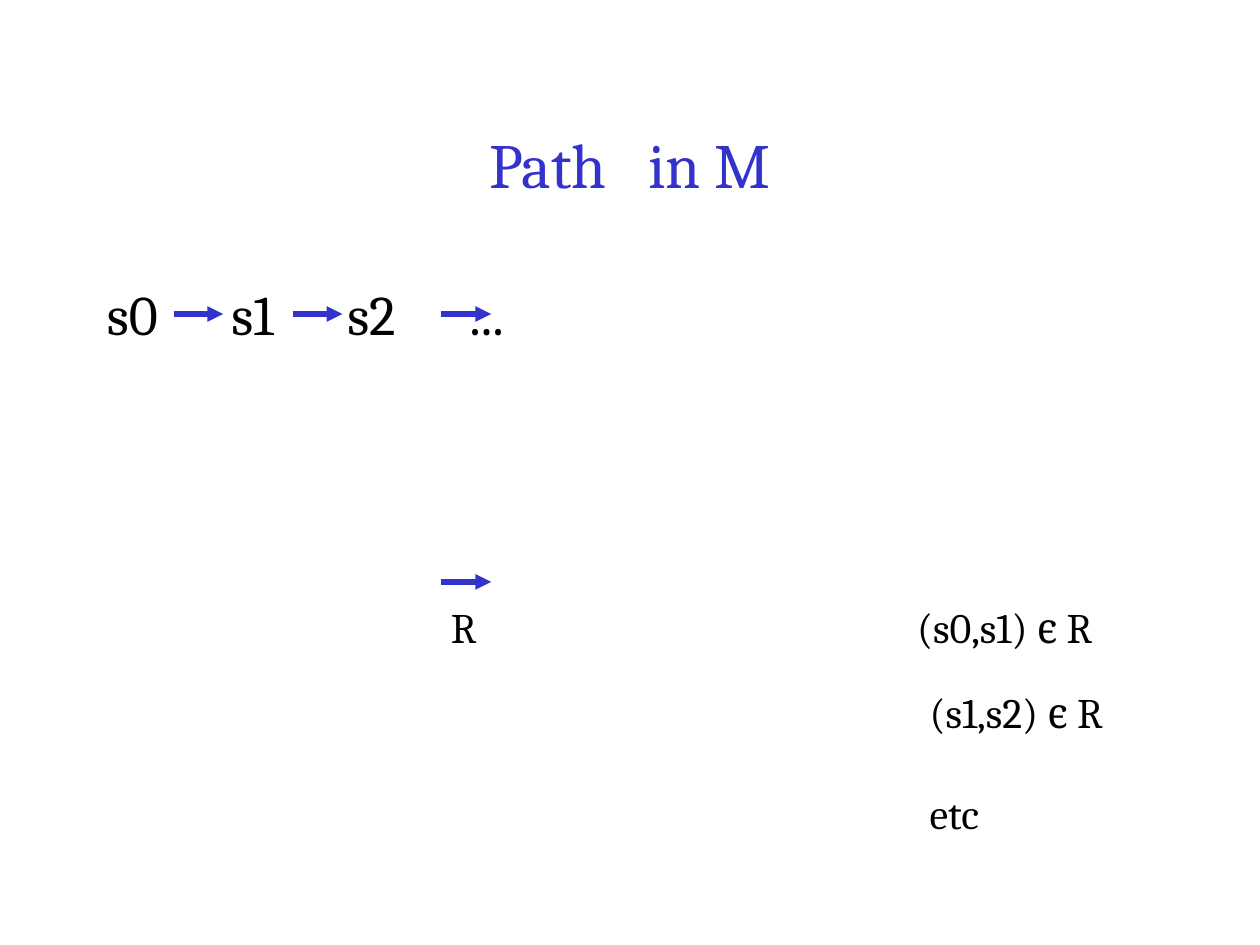
from pptx import Presentation
from pptx.dml.color import RGBColor
from pptx.enum.shapes import MSO_CONNECTOR as Connector
from pptx.enum.text import MSO_ANCHOR as Anchor, MSO_AUTO_SIZE as AutoSize, PP_ALIGN as Align
from pptx.oxml.ns import qn
from pptx.util import Cm, Pt
from lxml.etree import SubElement

BLUE = RGBColor(0x33, 0x33, 0xCC)
BLACK = RGBColor(0, 0, 0)


def add_run(paragraph, text, size, color=BLACK):
    run = paragraph.add_run()
    run.text = text
    run.font.name = "Cambria"
    run.font.size = Pt(size)
    run.font.color.rgb = color
    return run


def add_spaced_words(paragraph, words, size, color, extra_gap):
    for number, word in enumerate(words):
        if number:
            gap = add_run(paragraph, " ", size, color)
            gap.font._element.set("spc", str(extra_gap * 100))
        add_run(paragraph, word, size, color)


prs = Presentation()
prs.slide_width, prs.slide_height = Cm(25.4), Cm(19.05)
slide = prs.slides.add_slide(prs.slide_layouts[1])

title = slide.shapes.title
title.left, title.top, title.width, title.height = Cm(1.9), Cm(1.7), Cm(21.6), Cm(3.18)
title.text_frame.vertical_anchor = Anchor.MIDDLE
heading = title.text_frame.paragraphs[0]
heading.alignment = Align.CENTER
add_spaced_words(heading, ("Path", "in M"), 36, BLUE, 16)

body = slide.placeholders[1]
body.left, body.top, body.width, body.height = Cm(1.9), Cm(5.5), Cm(21.6), Cm(11.43)
body.text_frame.auto_size = AutoSize.NONE
states = body.text_frame.paragraphs[0]
states_format = states._p.get_or_add_pPr()
states_format.set("marL", "0")
states_format.set("indent", "0")
SubElement(states_format, qn("a:buNone"))
add_spaced_words(states, ("s0", "s1", "s2", "..."), 32, BLACK, 35)

for left, top in ((3.5, 6.33), (5.9, 6.33), (8.9, 6.33), (8.9, 11.73)):
    arrow = slide.shapes.add_connector(Connector.STRAIGHT, Cm(left), Cm(top), Cm(left + 1), Cm(top))
    arrow.line.color.rgb = BLUE
    arrow.line.width = Pt(3)
    SubElement(arrow.line._get_or_add_ln(), qn("a:tailEnd"), type="triangle")
    SubElement(arrow._element.spPr, qn("a:effectLst"))

labels = (
    (8.84, 12, 1.12, 1.27, ["R"]),
    (18.24, 12, 4.62, 2.29, ["(s0,s1) є R"]),
    (18.49, 13.72, 4.62, 3.3, ["(s1,s2) є R", "etc"]),
)
for left, top, width, height, lines in labels:
    label = slide.shapes.add_textbox(Cm(left), Cm(top), Cm(width), Cm(height))
    frame = label.text_frame
    frame.word_wrap = False
    frame.auto_size = AutoSize.SHAPE_TO_FIT_TEXT
    for number, line in enumerate(lines):
        paragraph = frame.add_paragraph() if number else frame.paragraphs[0]
        paragraph.space_before = Pt(29 * number)
        add_run(paragraph, line, 24)

prs.save("out.pptx")
